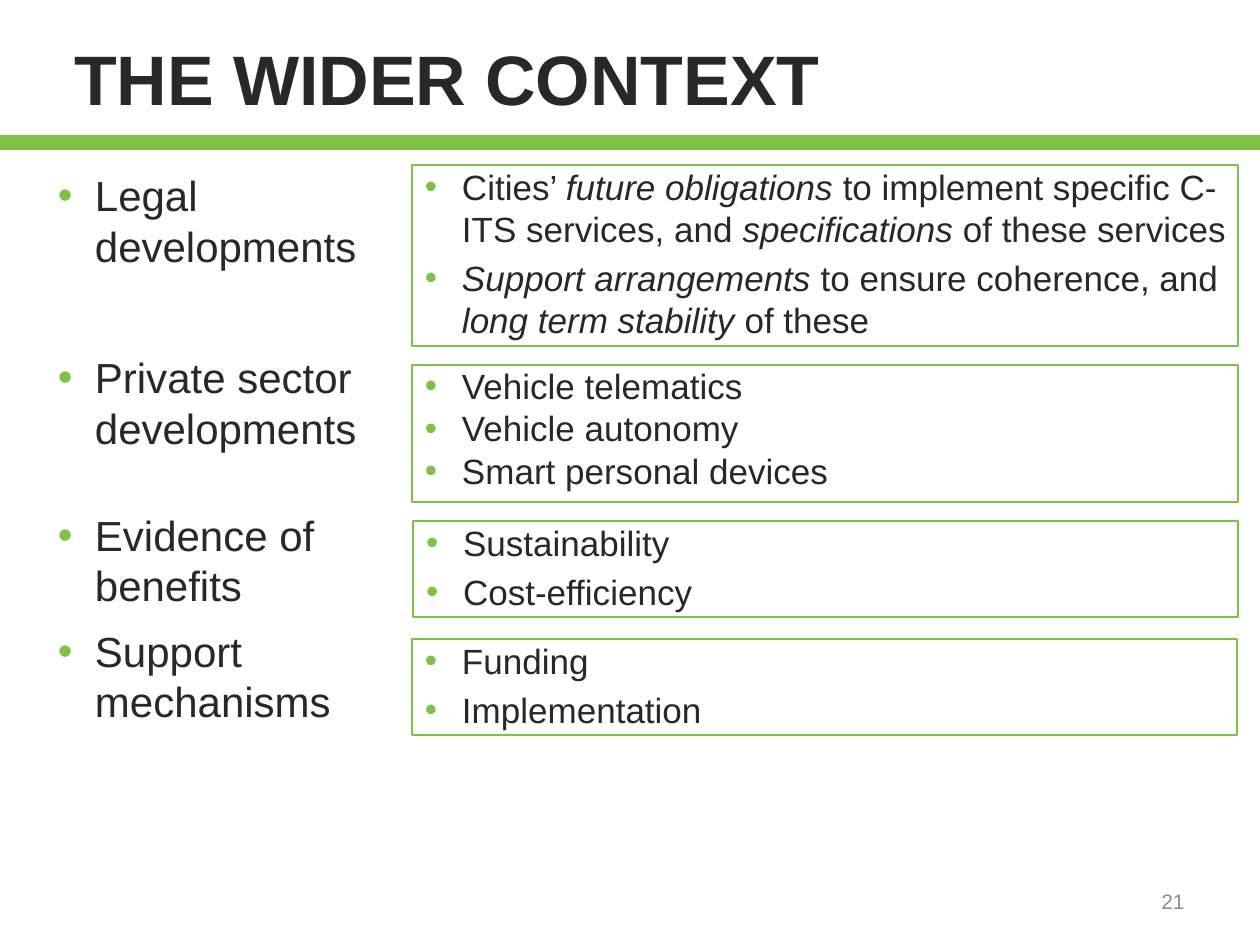
from lxml.etree import SubElement
from pptx import Presentation
from pptx.dml.color import RGBColor
from pptx.enum.shapes import MSO_SHAPE
from pptx.enum.text import MSO_ANCHOR, PP_ALIGN
from pptx.oxml.ns import qn
from pptx.util import Pt

COLORS = {"green": "7DC145", "text": "282828", "number": "8D8D8D"}
FONT = "Arial"
TITLE = "THE WIDER CONTEXT"
PAGE_NUMBER = "21"

# topic, px before it
TOPICS = [
    ("Legal developments", 0),
    ("Private sector developments", 81),
    ("Evidence of benefits", 57),
    ("Support mechanisms", 15),
]
# (left, top, width, height), px between points, points; every second run is italic
DETAILS = [
    ((412, 165, 826, 181), 7, [
        ["Cities’ ", "future obligations ", "to implement specific C-ITS services, and ",
         "specifications", " of these services"],
        ["", "Support arrangements ", "to ensure coherence, and ",
         "long term stability", " of these"],
    ]),
    ((412, 365, 826, 137), 0,
     [["Vehicle telematics"], ["Vehicle autonomy"], ["Smart personal devices"]]),
    ((413, 521, 825, 96), 7, [["Sustainability"], ["Cost-efficiency"]]),
    ((412, 639, 825, 96), 7, [["Funding"], ["Implementation"]]),
]


def px(length):
    return round(length * 914400 / 126)


def color(name):
    return RGBColor.from_string(COLORS[name])


def set_font(target, size, name="text", bold=False):
    target.font.name = FONT
    target.font.size = Pt(size)
    target.font.bold = bold
    target.font.color.rgb = color(name)


def prepare_frame(shape):
    frame = shape.text_frame
    frame.word_wrap = True
    frame.vertical_anchor = MSO_ANCHOR.TOP
    frame.margin_left = frame.margin_right = 0
    frame.margin_top = frame.margin_bottom = 0
    return frame


def add_bullets(frame, points, size, indent):
    """Fill the frame with bulleted points, each given as (runs, px before it)."""
    for index, (spans, gap) in enumerate(points):
        para = frame.paragraphs[0] if index == 0 else frame.add_paragraph()
        para.alignment = PP_ALIGN.LEFT
        para.space_before = px(gap)
        properties = para._p.get_or_add_pPr()
        properties.set("marL", str(px(indent)))
        properties.set("indent", str(px(-37)))
        bullet_color = SubElement(properties, qn("a:buClr"))
        SubElement(bullet_color, qn("a:srgbClr"), val=COLORS["green"])
        SubElement(properties, qn("a:buFont"), typeface=FONT)
        SubElement(properties, qn("a:buChar"), char="•")
        set_font(para, size)
        for position, text in enumerate(spans):
            if text:
                span = para.add_run()
                span.text = text
                span.font.italic = position % 2 == 1


def add_rectangle(page, place):
    shape = page.shapes.add_shape(MSO_SHAPE.RECTANGLE, *map(px, place))
    shape.shadow.inherit = False
    return shape


def main():
    deck = Presentation()
    deck.slide_width, deck.slide_height = px(1260), px(945)
    page = deck.slides.add_slide(deck.slide_layouts[5])

    bar = add_rectangle(page, (0, 135, 1260, 15))
    bar.fill.solid()
    bar.fill.fore_color.rgb = color("green")
    bar.line.fill.background()

    title = page.shapes.title
    title.left, title.top, title.width, title.height = map(px, (74, 35, 1121, 66))
    heading = prepare_frame(title).paragraphs[0]
    heading.text = TITLE
    heading.alignment = PP_ALIGN.LEFT
    set_font(heading, 40, bold=True)

    number = page.shapes.add_textbox(*map(px, (903, 876, 294, 50)))
    number.text_frame.word_wrap = True
    number.text_frame.vertical_anchor = MSO_ANCHOR.MIDDLE
    para = number.text_frame.paragraphs[0]
    para.text = PAGE_NUMBER
    para.alignment = PP_ALIGN.RIGHT
    set_font(para, 12, "number")

    topics = page.shapes.add_textbox(*map(px, (58, 170, 354, 669)))
    add_bullets(prepare_frame(topics), [([text], gap) for text, gap in TOPICS], 24, 37)

    for place, gap, points in DETAILS:
        box = add_rectangle(page, place)
        box.fill.background()
        box.line.color.rgb = color("green")
        box.line.width = Pt(0.75)
        spaced = [(spans, gap if index else 0) for index, spans in enumerate(points)]
        add_bullets(prepare_frame(box), spaced, 20, 50)

    deck.save("out.pptx")


if __name__ == "__main__":
    main()
